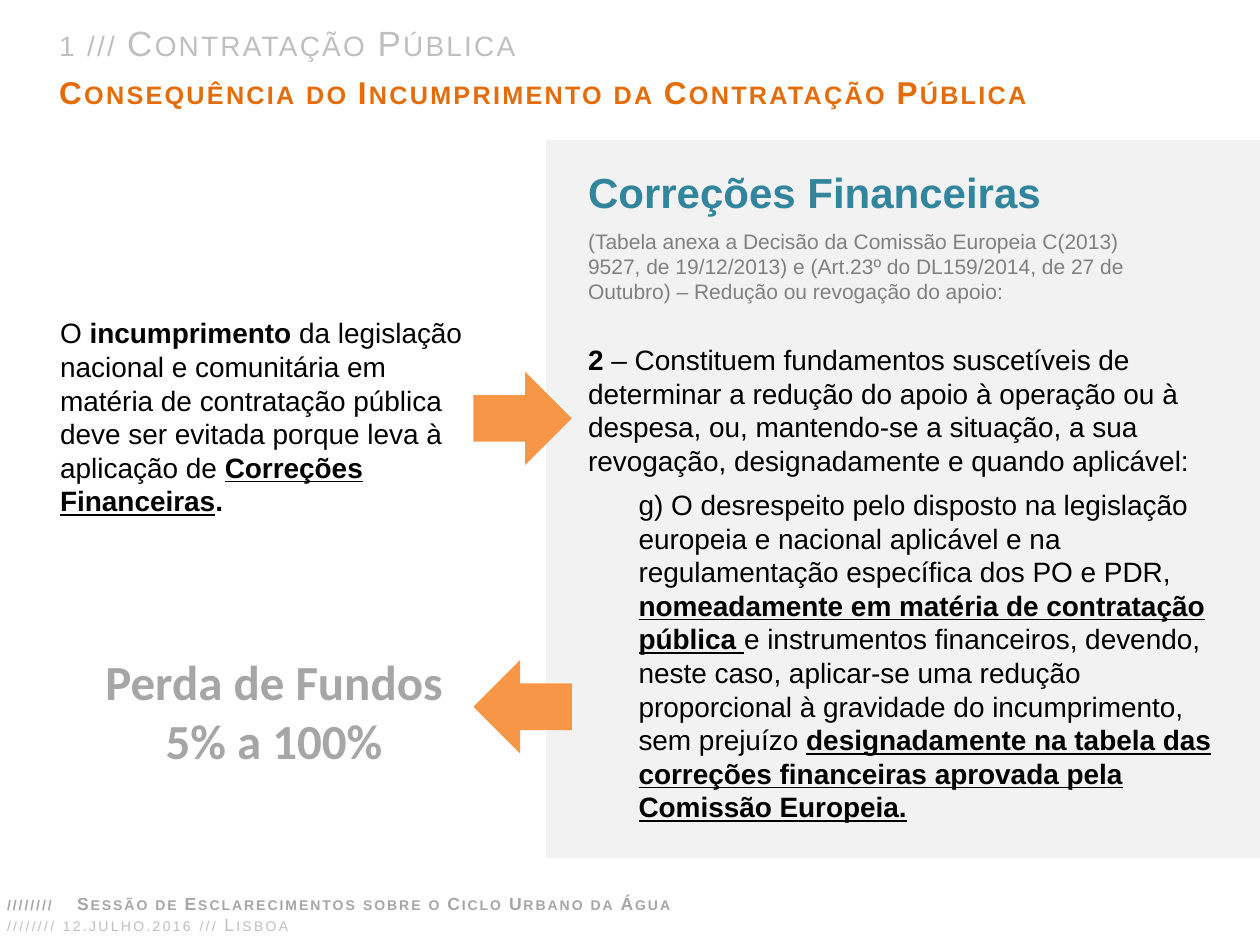
"""Build the slide on financial corrections in public procurement."""
from lxml import etree
from pptx import Presentation
from pptx.dml.color import RGBColor
from pptx.enum.shapes import MSO_SHAPE
from pptx.enum.text import MSO_AUTO_SIZE, PP_ALIGN
from pptx.oxml.ns import qn
from pptx.util import Pt

RECTANGLE = MSO_SHAPE.RECTANGLE
DOWN_ARROW = MSO_SHAPE.DOWN_ARROW
GROW = MSO_AUTO_SIZE.SHAPE_TO_FIT_TEXT
LEFT, CENTER = PP_ALIGN.LEFT, PP_ALIGN.CENTER

BLACK = RGBColor(0x00, 0x00, 0x00)
DARK_GRAY = RGBColor(0x80, 0x80, 0x80)
GRAY = RGBColor(0xA6, 0xA6, 0xA6)
LIGHT_GRAY = RGBColor(0xBF, 0xBF, 0xBF)
PANEL_GRAY = RGBColor(0xF2, 0xF2, 0xF2)
ORANGE = RGBColor(0xE4, 0x6C, 0x0A)
ARROW_ORANGE = RGBColor(0xF7, 0x96, 0x46)
TEAL = RGBColor(0x31, 0x85, 0x9C)

PLAIN, BOLD, UNDERLINED = "plain", "bold", "underlined"
MARGIN = 26.8
PANEL_TEXT = 329
ARROW_LEFT = 272


class SlideBuilder:
    """Hold the text style and the current slide."""

    font_name = "Arial"

    def __init__(self, slide):
        self.slide = slide

    def shape(self, kind, left, top, width, height, color, rotation=0):
        shape = self.slide.shapes.add_shape(kind, Pt(left), Pt(top), Pt(width), Pt(height))
        shape.shadow.inherit = False
        shape.fill.solid()
        shape.fill.fore_color.rgb = color
        shape.line.fill.background()
        shape.rotation = rotation

    def text(self, left, top, width, height, paragraphs, size, color, font_name=None,
             alignment=LEFT, before=0, after=0):
        box = self.slide.shapes.add_textbox(Pt(left), Pt(top), Pt(width), Pt(height))
        frame = box.text_frame
        frame.word_wrap = True
        frame.auto_size = GROW
        for index, pieces in enumerate(paragraphs):
            paragraph = frame.add_paragraph() if index else frame.paragraphs[0]
            paragraph.alignment = alignment
            paragraph.space_before = Pt(before)
            paragraph.space_after = Pt(after)
            for words, emphasis in pieces:
                run = paragraph.add_run()
                run.text = words
                run.font.name = font_name or self.font_name
                run.font.size = Pt(size)
                run.font.color.rgb = color
                run.font.bold = emphasis != PLAIN
                run.font.underline = emphasis == UNDERLINED
        return frame

    def small_caps(self, left, top, width, height, words, size, color, emphasis=PLAIN,
                   spacing=1.3, after=0):
        frame = self.text(left, top, width, height, [[(words, emphasis)]], size, color,
                          after=after)
        paragraph = frame.paragraphs[0]
        properties = paragraph.runs[0]._r.get_or_add_rPr()
        properties.set("cap", "small")
        properties.set("spc", str(round(spacing * 100)))
        return paragraph

    def indent(self, paragraph, distance):
        properties = paragraph._p.get_or_add_pPr()
        properties.set("marL", str(Pt(distance)))
        properties.set("indent", "0")

    def tab_stop(self, paragraph, position):
        tabs = etree.SubElement(paragraph._p.get_or_add_pPr(), qn("a:tabLst"))
        etree.SubElement(tabs, qn("a:tab"), pos=str(Pt(position)), algn="l")


def main():
    presentation = Presentation()
    presentation.slide_width = Pt(720)
    presentation.slide_height = Pt(540)
    builder = SlideBuilder(presentation.slides.add_slide(presentation.slide_layouts[6]))

    builder.shape(RECTANGLE, 312, 80, 408, 410.4, PANEL_GRAY)
    builder.text(MARGIN + 0.5, 177, 248.4, 124, [[
        ("O ", PLAIN),
        ("incumprimento", BOLD),
        (" da legislação nacional e comunitária em matéria de contratação pública "
         "deve ser evitada porque leva à aplicação de ", PLAIN),
        ("Correções Financeiras", UNDERLINED),
        (".", BOLD),
    ]], 16, BLACK)
    builder.text(PANEL_TEXT, 126.8, 340, 51, [[
        ("(Tabela anexa a Decisão da Comissão Europeia C(2013) 9527, de 19/12/2013) e "
         "(Art.23º do DL159/2014, de 27 de Outubro) – Redução ou revogação do apoio:", PLAIN),
    ]], 12, DARK_GRAY)
    grounds = builder.text(PANEL_TEXT, 192.3, 373, 284.4, [
        [
            ("2", BOLD),
            (" – Constituem fundamentos suscetíveis de determinar a redução do apoio à "
             "operação ou à despesa, ou, mantendo-se a situação, a sua revogação, "
             "designadamente e quando aplicável:", PLAIN),
        ],
        [
            ("g) O desrespeito pelo disposto na legislação europeia e nacional aplicável e "
             "na regulamentação específica dos PO e PDR, ", PLAIN),
            ("nomeadamente em matéria de contratação pública ", UNDERLINED),
            ("e instrumentos financeiros, devendo, neste caso, aplicar-se uma redução "
             "proporcional à gravidade do incumprimento, sem prejuízo ", PLAIN),
            ("designadamente na tabela das correções financeiras aprovada pela "
             "Comissão Europeia.", UNDERLINED),
        ],
    ], 16, BLACK, before=6)
    builder.indent(grounds.paragraphs[1], 28.8)
    builder.text(37.4, 368.6, 238.3, 75, [[("Perda de Fundos", BOLD)], [("5% a 100%", BOLD)]],
                 28, GRAY, font_name="Calibri", alignment=CENTER)

    builder.small_caps(MARGIN, 8.8, 693, 31.5, "1 /// Contratação Pública", 20, LIGHT_GRAY,
                       after=6)
    builder.small_caps(-3, 519, 557, 31.5, "//////// 12.julho.2016 /// Lisboa", 10, LIGHT_GRAY)
    session = builder.small_caps(
        -3, 507, 557, 19.4, "////////\tSessão de Esclarecimentos sobre o Ciclo Urbano da Água",
        10, GRAY, BOLD, spacing=1.1)
    builder.tab_stop(session, 40)
    builder.small_caps(MARGIN, 38.3, 631, 29,
                       "Consequência do Incumprimento da Contratação Pública", 18, ORANGE, BOLD,
                       after=6)
    builder.text(PANEL_TEXT, 91.4, 333, 36, [[("Correções Financeiras", BOLD)]], 24, TEAL,
                 after=6)

    for top, rotation in ((211, 270), (375.8, 90)):
        builder.shape(DOWN_ARROW, ARROW_LEFT, top, 53.3, 56.2, ARROW_ORANGE, rotation)

    presentation.save("out.pptx")


if __name__ == "__main__":
    main()
